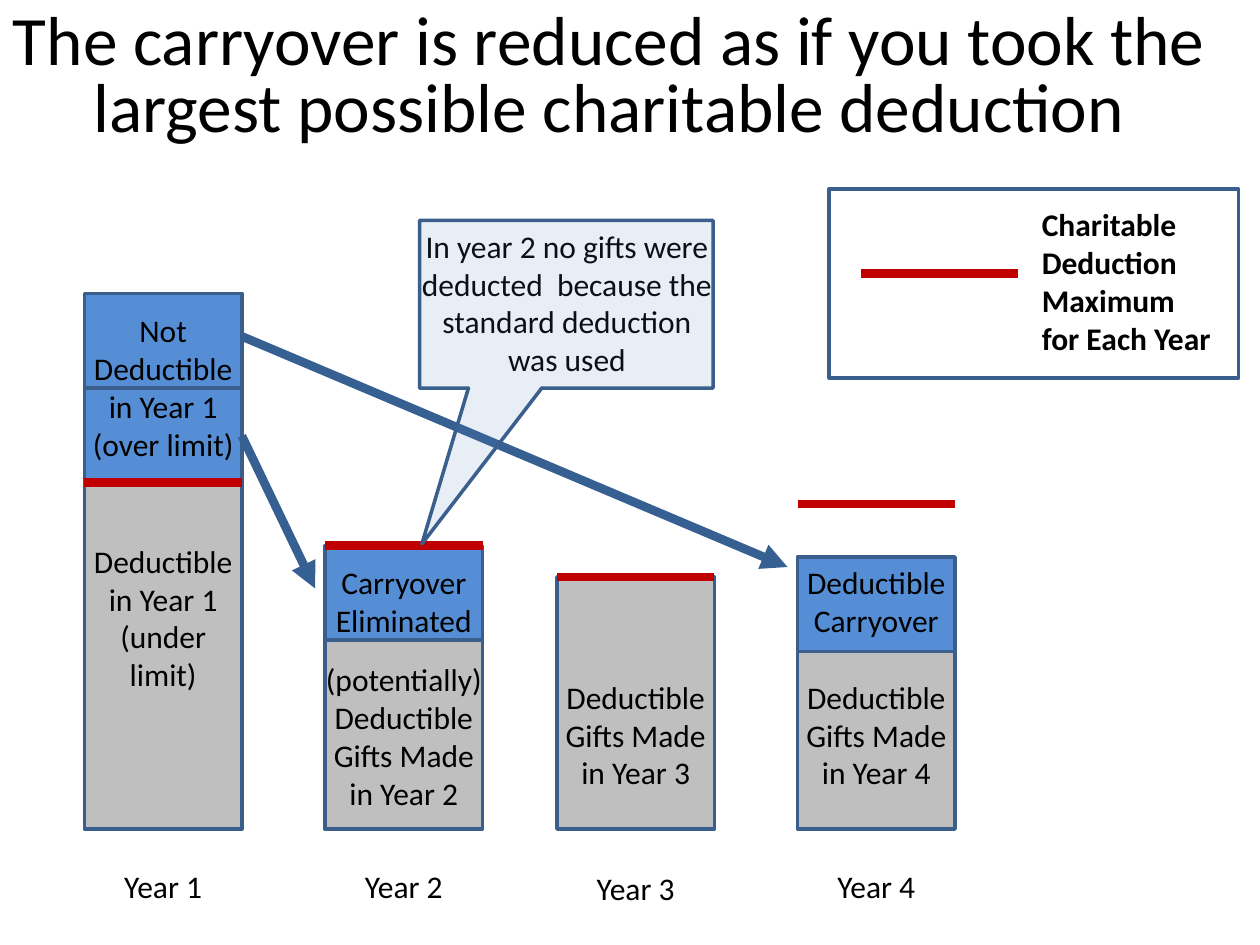
from lxml import etree
from pptx import Presentation
from pptx.dml.color import RGBColor
from pptx.enum.shapes import MSO_CONNECTOR as Connector, MSO_SHAPE as Preset
from pptx.enum.text import MSO_ANCHOR as Anchor, PP_ALIGN as Align
from pptx.oxml.ns import qn
from pptx.util import Inches, Pt

COLORS = {
    "text": "000000",
    "gift": "BFBFBF",
    "carryover": "558ED5",
    "outline": "3A5F8C",
    "limit": "C00000",
    "arrow": "376092",
    "callout": "4F81BD",
}
BAR_WIDTH = 1.25
BASE = 6.58


def color(name):
    return RGBColor.from_string(COLORS[name])


def add_text(slide, box, text, size=18, bold=False, align=Align.CENTER,
             anchor=Anchor.TOP, side=0.1, spacing=None):
    frame = slide.shapes.add_textbox(*map(Inches, box)).text_frame
    frame.word_wrap = True
    frame.vertical_anchor = anchor
    frame.margin_left = frame.margin_right = Inches(side)
    para = frame.paragraphs[0]
    para.alignment = align
    if spacing:
        para.line_spacing = spacing
    span = para.add_run()
    span.text = text
    span.font.name = "Calibri"
    span.font.size = Pt(size)
    span.font.bold = bold
    span.font.color.rgb = color("text")


def add_box(slide, box, fill=None, preset=Preset.RECTANGLE):
    shape = slide.shapes.add_shape(preset, *map(Inches, box))
    shape.shadow.inherit = False
    if fill:
        shape.fill.solid()
        shape.fill.fore_color.rgb = color(fill)
    else:
        shape.fill.background()
    shape.line.color.rgb = color("outline")
    shape.line.width = Pt(2)
    return shape


def add_line(slide, start, end, stroke="limit", width=4.75, arrow=False):
    line = slide.shapes.add_connector(
        Connector.STRAIGHT, *map(Inches, (*start, *end)))
    line.line.color.rgb = color(stroke)
    line.line.width = Pt(width)
    if arrow:
        head = etree.SubElement(line.line._get_or_add_ln(), qn("a:tailEnd"))
        head.set("type", "triangle")
    etree.SubElement(line._element.spPr, qn("a:effectLst"))


def add_limit(slide, left, top):
    add_line(slide, (left, top), (left + BAR_WIDTH, top))


def add_title(slide, box):
    add_text(slide, box, "The carryover is reduced as if you took the largest "
             "possible charitable deduction", size=39.6, anchor=Anchor.MIDDLE,
             spacing=0.8)


def add_year(slide, box, name, segments, limit, captions, name_top=6.83):
    left, top, width, height = box
    bottom = top + height
    for fill, part in segments:
        bottom -= part
        add_box(slide, (left, bottom, width, part), fill)
    add_limit(slide, left, limit)
    for text, text_top, text_height in captions:
        add_text(slide, (left, text_top, width, text_height), text, side=0)
    add_text(slide, (left, name_top, width, 0.4), name)


def add_legend(slide, box):
    left, top, width, height = box
    add_limit(slide, left + 0.25, top + 0.67)
    add_text(slide, (left + 1.59, top + 0.08, 1.58, 1.31),
             "Charitable Deduction Maximum for Each Year",
             bold=True, align=Align.LEFT)
    add_box(slide, box)


def add_callout(slide, box):
    left, top, width, height = box
    add_text(slide, (left - 0.08, top, width + 0.17, 1.31),
             "In year 2 no gifts were deducted  because the standard "
             "deduction was used")
    callout = add_box(slide, box, "callout", Preset.RECTANGULAR_CALLOUT)
    callout.adjustments[0] = -0.492
    callout.adjustments[1] = 1.431
    tint = callout._element.spPr.find(qn("a:solidFill"))[0]
    etree.SubElement(tint, qn("a:alpha")).set("val", "13000")


def main():
    deck = Presentation()
    deck.slide_width, deck.slide_height = Inches(10), Inches(7.5)
    slide = deck.slides.add_slide(deck.slide_layouts[6])

    years = [
        (0.67, 2.33, "Year 1",
         [("gift", 2.75), ("carryover", 0.75), ("carryover", 0.75)], 3.83,
         [("Deductible in Year 1 (under limit)", 4.25, 1.31),
          ("Not Deductible in Year 1 (over limit)", 2.42, 1.31)], 6.83),
        (2.58, 4.33, "Year 2",
         [("gift", 1.5), ("carryover", 0.75)], 4.33,
         [("Carryover Eliminated", 4.42, 0.71),
          ("(potentially)Deductible Gifts Made in Year 2", 5.19, 1.31)], 6.83),
        (4.42, 4.58, "Year 3",
         [("gift", 2)], 4.58,
         [("Deductible Gifts Made in Year 3", 5.33, 1.01)], 6.85),
        (6.33, 4.42, "Year 4",
         [("gift", 1.41), ("carryover", 0.75)], 4,
         [("Deductible Carryover", 4.42, 0.71),
          ("Deductible Gifts Made in Year 4", 5.33, 1.01)], 6.83),
    ]
    for left, top, *details in years:
        add_year(slide, (left, top, BAR_WIDTH, BASE - top), *details)

    for start, end in [((1.92, 3.46), (2.5, 4.67)),
                       ((1.92, 2.67), (6.25, 4.5))]:
        add_line(slide, start, end, "arrow", 5, arrow=True)

    add_legend(slide, (6.58, 1.5, 3.25, 1.5))
    add_title(slide, (0, 0, 9.67, 1.25))
    add_callout(slide, (3.33, 1.75, 2.33, 1.33))
    deck.save("out.pptx")


if __name__ == "__main__":
    main()
